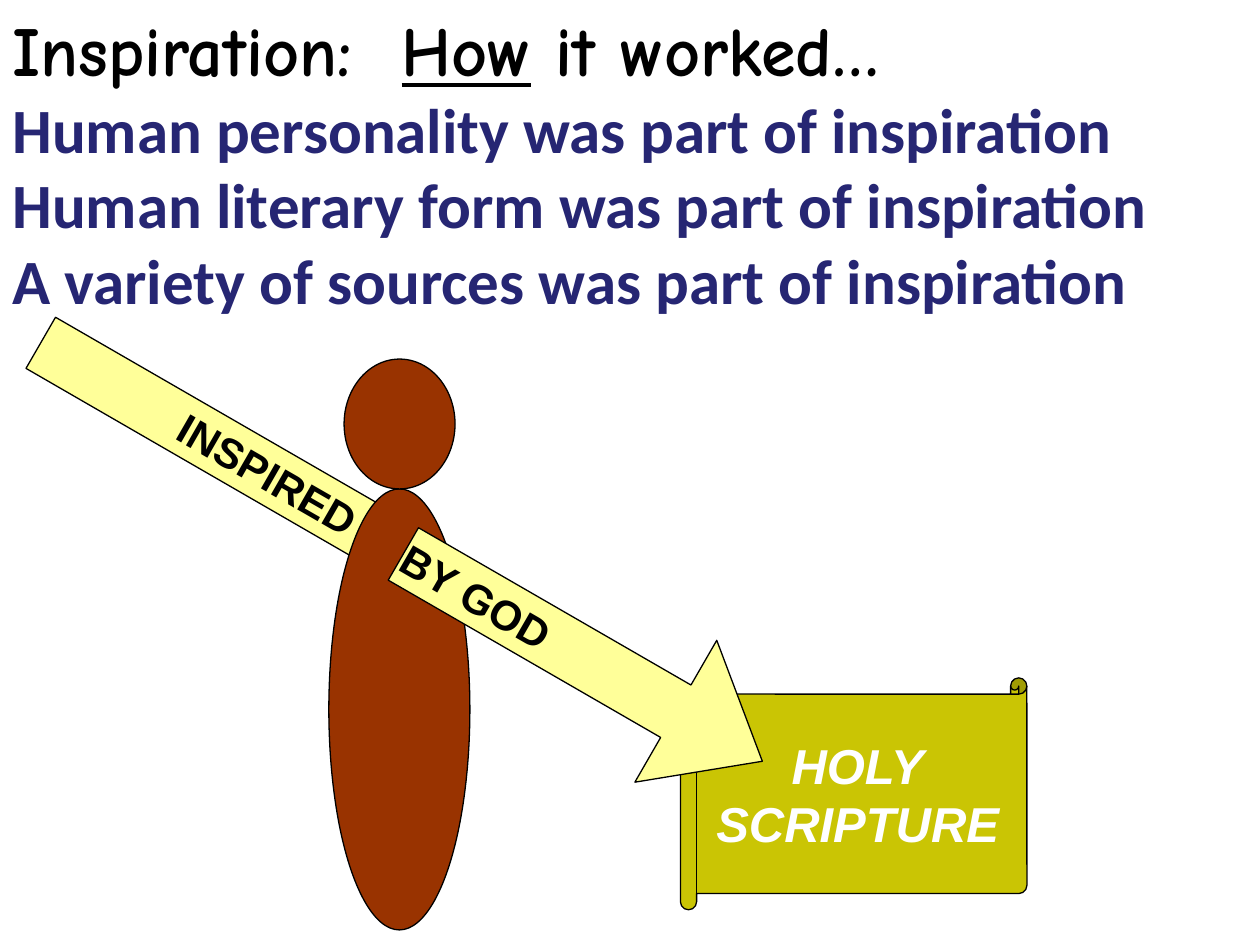
"""Build a slide on how inspiration worked."""
from dataclasses import dataclass
from typing import Any

from pptx import Presentation
from pptx.dml.color import RGBColor
from pptx.enum.shapes import MSO_SHAPE as Form
from pptx.enum.text import MSO_ANCHOR as Anchor, PP_ALIGN as Align
from pptx.util import Pt

BLACK = RGBColor(0x00, 0x00, 0x00)
WHITE = RGBColor(0xFF, 0xFF, 0xFF)
NAVY = RGBColor(0x26, 0x26, 0x73)
GOLD = RGBColor(0xCA, 0xC5, 0x04)
CREAM = RGBColor(0xFF, 0xFF, 0x99)
BROWN = RGBColor(0x99, 0x33, 0x00)

TITLE = {"name": "Comic Neue", "size": Pt(40), "bold": True}
POINT = {"name": "Calibri", "size": Pt(36), "bold": True}
LABEL = {"name": "Arial", "size": Pt(24), "bold": True, "italic": False}
BOOK = LABEL | {"size": Pt(28), "italic": True}

HEADING = (("Inspiration:  ", False), ("How", True), (" it worked…", False))
POINTS = tuple(
    f"{theme} was part of inspiration"
    for theme in ("Human personality", "Human literary form", "A variety of sources")
)


@dataclass(frozen=True)
class Part:
    """A filled shape, with lengths in points."""

    form: Form
    left: float
    top: float
    width: float
    height: float
    fill: RGBColor
    turn: float = 0
    bends: tuple[float, ...] = ()
    lines: tuple[str, ...] = ()
    font: dict[str, Any] | None = None
    color: RGBColor = BLACK
    align: Align = Align.CENTER
    inset: float = 7.2


PARTS = (
    Part(Form.HORIZONTAL_SCROLL, 388.8, 387.4, 198, 132.5, GOLD, bends=(0.07,),
         lines=("HOLY", "SCRIPTURE"), font=BOOK, color=WHITE),
    Part(Form.RECTANGLE, 7.2, 239, 239.8, 33.8, CREAM, turn=30,
         lines=("INSPIRED",), font=LABEL, inset=67),
    Part(Form.OVAL, 187.9, 279.4, 80.6, 252, BROWN),
    Part(Form.OVAL, 196.6, 205.2, 63.4, 74.2, BROWN),
    Part(Form.RIGHT_ARROW, 214.6, 329, 236.9, 93.6, CREAM, turn=30, bends=(0.37, 0.61),
         lines=("BY GOD",), font=LABEL, align=Align.LEFT, inset=1),
)


def style(font: Any, looks: dict[str, Any], color: RGBColor) -> None:
    """Apply a dict of font values and a colour."""
    for key, value in looks.items():
        setattr(font, key, value)
    font.color.rgb = color


def add_lines(frame: Any, lines: tuple[str, ...], looks: dict[str, Any],
              color: RGBColor, align: Align, fresh: bool = True) -> None:
    """Write one paragraph per line, first in the open one if fresh."""
    for rank, line in enumerate(lines):
        para = frame.paragraphs[0] if fresh and rank == 0 else frame.add_paragraph()
        para.alignment = align
        run = para.add_run()
        run.text = line
        style(run.font, looks, color)


def draw(group: Any, part: Part) -> None:
    """Draw one part in the group."""
    place = (Pt(n) for n in (part.left, part.top, part.width, part.height))
    shape = group.shapes.add_shape(part.form, *place)
    shape.shadow.inherit = False
    shape.rotation = part.turn
    for rank, bend in enumerate(part.bends):
        shape.adjustments[rank] = bend
    shape.fill.solid()
    shape.fill.fore_color.rgb = part.fill
    shape.line.color.rgb = BLACK
    shape.line.width = Pt(0.75)
    if part.lines:
        frame = shape.text_frame
        looks = {"word_wrap": True, "vertical_anchor": Anchor.MIDDLE,
                 "margin_left": Pt(part.inset)}
        for key, value in looks.items():
            setattr(frame, key, value)
        add_lines(frame, part.lines, part.font, part.color, part.align)


def add_head(slide: Any) -> None:
    """Write the heading and its three points."""
    frame = slide.shapes.add_textbox(Pt(0), Pt(0), Pt(720), Pt(186.5)).text_frame
    frame.word_wrap = True
    for text, lined in HEADING:
        run = frame.paragraphs[0].add_run()
        run.text = text
        style(run.font, TITLE | {"underline": lined}, BLACK)
    add_lines(frame, POINTS, POINT, NAVY, Align.LEFT, fresh=False)


def main() -> None:
    """Build and save the deck."""
    deck = Presentation()
    deck.slide_width, deck.slide_height = Pt(720), Pt(540)
    slide = deck.slides.add_slide(deck.slide_layouts[6])
    add_head(slide)
    group = slide.shapes.add_group_shape()
    for part in PARTS:
        draw(group, part)
    deck.save("out.pptx")


if __name__ == "__main__":
    main()
